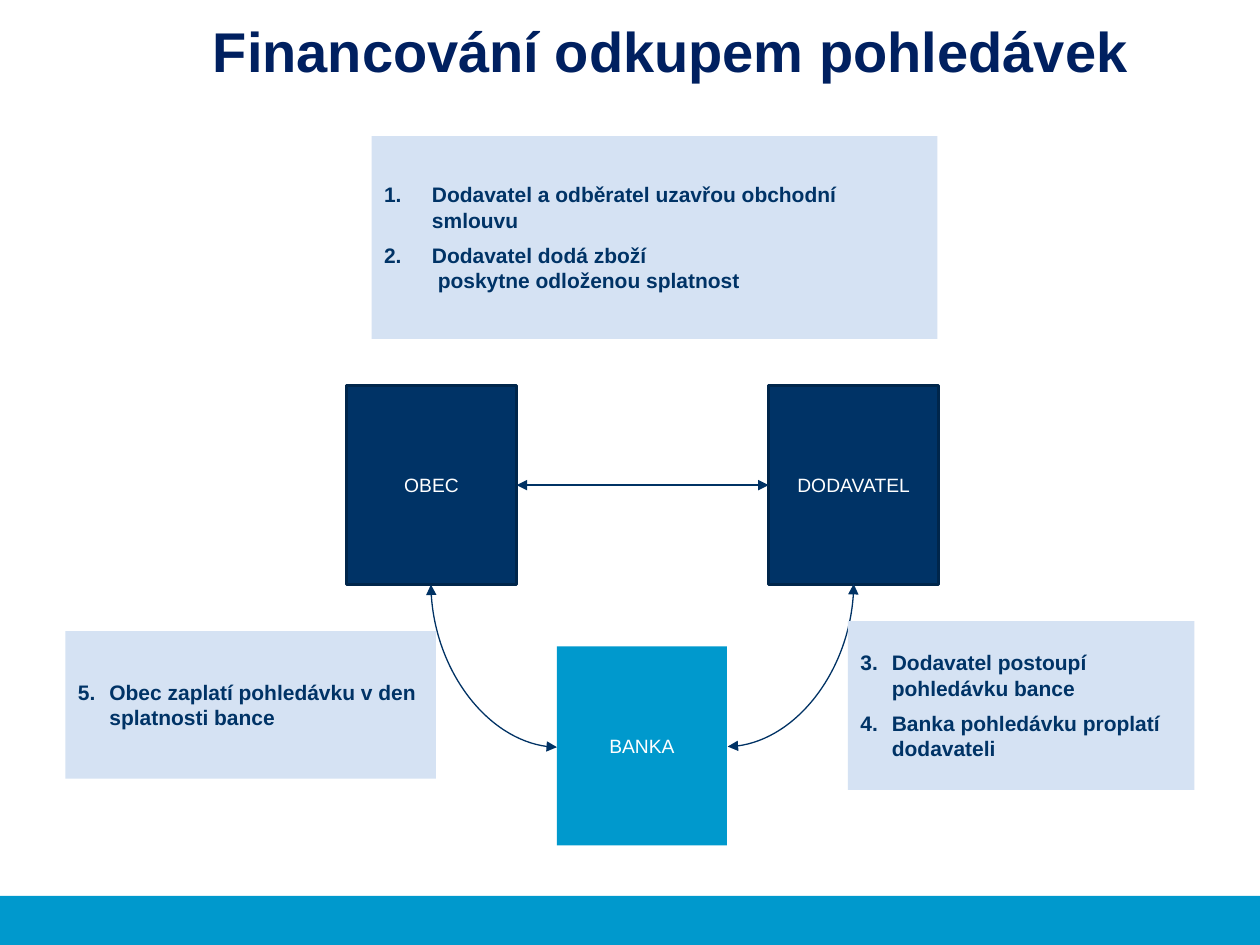
from dataclasses import dataclass

from lxml import etree
from pptx import Presentation
from pptx import util as u
from pptx.dml.color import RGBColor
from pptx.enum import shapes, text
from pptx.oxml import ns


@dataclass(frozen=True)
class Theme:
    font: str = "Arial"
    title_color: str = "002060"
    navy: str = "003366"
    navy_edge: str = "00264B"
    arrow: str = "003264"
    cyan: str = "0099CD"
    pale: str = "D5E2F3"
    white: str = "FFFFFF"
    title_size: float = 32
    note_size: float = 12
    party_size: float = 11


def add_element(parent, tag, **attributes):
    return etree.SubElement(parent, ns.qn(tag), attributes)


class SlideBuilder:
    def __init__(self, slide, theme):
        self.slide = slide
        self.theme = theme

    def format_font(self, font, size, color, bold=False):
        font.name = self.theme.font
        font.size = u.Pt(size)
        font.bold = bold
        font.color.rgb = RGBColor.from_string(color)

    def title(self, wording, left, top, width, height):
        title = self.slide.shapes.title
        title.left, title.top = u.Inches(left), u.Inches(top)
        title.width, title.height = u.Inches(width), u.Inches(height)
        frame = title.text_frame
        frame.text = wording
        frame.margin_left = frame.margin_right = 0
        frame.margin_top = frame.margin_bottom = 0
        frame.vertical_anchor = text.MSO_ANCHOR.MIDDLE
        paragraph = frame.paragraphs[0]
        paragraph.alignment = text.PP_ALIGN.LEFT
        self.format_font(paragraph.runs[0].font, self.theme.title_size,
                         self.theme.title_color, bold=True)

    def box(self, left, top, width, height, fill, edge=None):
        shape = self.slide.shapes.add_shape(
            shapes.MSO_SHAPE.RECTANGLE, u.Inches(left), u.Inches(top),
            u.Inches(width), u.Inches(height))
        shape.shadow.inherit = False
        shape.fill.solid()
        shape.fill.fore_color.rgb = RGBColor.from_string(fill)
        if edge:
            shape.line.color.rgb = RGBColor.from_string(edge)
            shape.line.width = u.Pt(2)
        else:
            shape.line.fill.background()
        shape.text_frame.word_wrap = True
        shape.text_frame.vertical_anchor = text.MSO_ANCHOR.MIDDLE
        return shape

    def party(self, name, left, top, fill, edge=None):
        shape = self.box(left, top, 1.35, 1.58, fill, edge)
        shape.text_frame.text = name
        paragraph = shape.text_frame.paragraphs[0]
        paragraph.alignment = text.PP_ALIGN.CENTER
        self.format_font(paragraph.runs[0].font, self.theme.party_size, self.theme.white)
        return shape

    def steps(self, items, left, top, width, height, start, indent):
        """Pale box with a numbered list that begins at start."""
        frame = self.box(left, top, width, height, self.theme.pale).text_frame
        frame.text = "\n".join(items)
        for index, paragraph in enumerate(frame.paragraphs):
            properties = paragraph._p.get_or_add_pPr()
            properties.set("marL", str(u.Inches(indent)))
            properties.set("indent", str(-u.Inches(indent)))
            add_element(properties, "a:buFont", typeface="+mj-lt")
            add_element(properties, "a:buAutoNum", type="arabicPeriod", startAt=str(start))
            paragraph.alignment = text.PP_ALIGN.LEFT
            paragraph.space_before = u.Pt(3 if index else 0)
            paragraph.space_after = u.Pt(3)
            for run in paragraph.runs:
                self.format_font(run.font, self.theme.note_size, self.theme.navy, bold=True)

    def double_arrow(self, kind, left, top, width, height):
        connector = self.slide.shapes.add_connector(
            kind, u.Inches(left), u.Inches(top),
            u.Inches(left + width), u.Inches(top + height))
        connector.line.color.rgb = RGBColor.from_string(self.theme.arrow)
        connector.line.width = u.Pt(0.75)
        line = connector.line._get_or_add_ln()
        add_element(line, "a:headEnd", type="triangle")
        add_element(line, "a:tailEnd", type="triangle")
        add_element(connector._element.spPr, "a:effectLst")
        return connector

    def straight_arrow(self, first, second):
        connector = self.double_arrow(shapes.MSO_CONNECTOR.STRAIGHT, 0, 0, 1, 1)
        connector.begin_connect(first, 3)
        connector.end_connect(second, 1)

    def quarter_arrow(self, left, top, width, height, degrees):
        """Quarter-turn curve; the frame is given before its rotation."""
        connector = self.double_arrow(shapes.MSO_CONNECTOR.CURVE, left, top, width, height)
        properties = connector._element.spPr
        properties.find(ns.qn("a:xfrm")).set("rot", str(degrees * 60000))
        properties.find(ns.qn("a:prstGeom")).set("prst", "curvedConnector2")


def main():
    theme = Theme()
    presentation = Presentation()
    presentation.slide_width = u.Inches(10)
    presentation.slide_height = u.Inches(7.5)
    slide = presentation.slides.add_slide(presentation.slide_layouts[5])
    builder = SlideBuilder(slide, theme)

    builder.box(0, 7.11, 10, 0.39, theme.cyan)
    builder.title("Financování odkupem pohledávek", 1.69, 0, 8.08, 0.79)

    municipality = builder.party("OBEC", 2.75, 3.06, theme.navy, theme.navy_edge)
    supplier = builder.party("DODAVATEL", 6.1, 3.06, theme.navy, theme.navy_edge)
    builder.party("BANKA", 4.42, 5.13, theme.cyan)

    builder.straight_arrow(municipality, supplier)
    builder.quarter_arrow(5.63, 4.78, 1.29, 1, 90)
    builder.quarter_arrow(3.42, 4.64, 1, 1.29, 180)

    builder.steps(["Dodavatel a odběratel uzavřou obchodní smlouvu",
                   "Dodavatel dodá zboží\v poskytne odloženou splatnost"],
                  2.95, 1.08, 4.49, 1.61, start=1, indent=0.38)
    builder.steps(["Obec zaplatí pohledávku v den splatnosti bance"],
                  0.52, 5.01, 2.94, 1.17, start=5, indent=0.25)
    builder.steps(["Dodavatel postoupí pohledávku bance",
                   "Banka pohledávku proplatí dodavateli"],
                  6.73, 4.93, 2.75, 1.34, start=3, indent=0.25)

    presentation.save("out.pptx")


if __name__ == "__main__":
    main()
